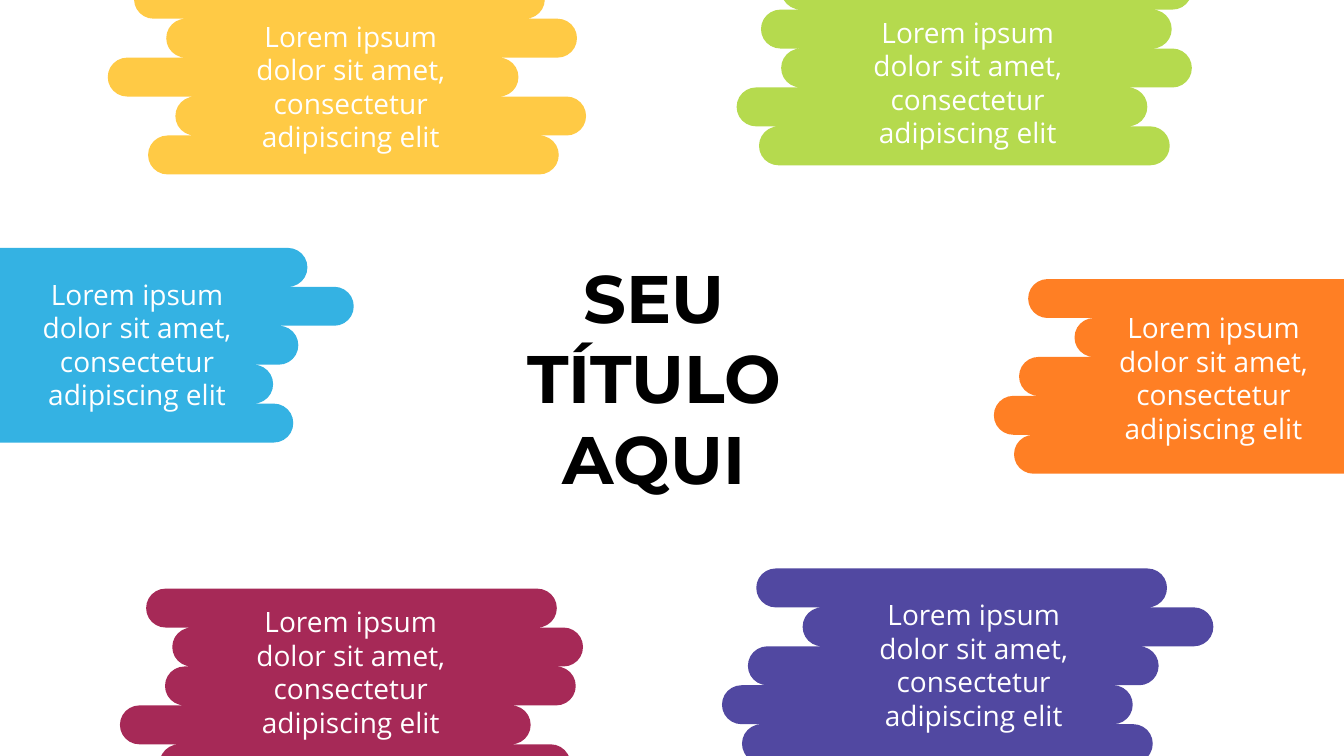
from math import asin, cos, degrees, pi, sin

from lxml.etree import Element
from pptx import Presentation
from pptx.dml.color import RGBColor
from pptx.enum.text import MSO_ANCHOR as Anchor, MSO_AUTO_SIZE as AutoSize, PP_ALIGN as Align
from pptx.oxml.ns import qn
from pptx.util import Pt

YELLOW = RGBColor(0xFF, 0xCA, 0x45)
GREEN = RGBColor(0xB5, 0xDA, 0x4E)
BLUE = RGBColor(0x34, 0xB2, 0xE3)
ORANGE = RGBColor(0xFF, 0x7F, 0x24)
MAROON = RGBColor(0xA6, 0x29, 0x57)
PURPLE = RGBColor(0x51, 0x48, 0xA1)
WHITE = RGBColor(0xFF, 0xFF, 0xFF)
BLACK = RGBColor(0x00, 0x00, 0x00)

# Content
TITLE = "SEU TÍTULO AQUI"
BODY = "Lorem ipsum dolor sit amet, consectetur adipiscing elit"

# Colour, top of the stack, left end of each bar, left and top of the text
SPLASHES = [
    (ORANGE, 199.4, (734.4, 767.5, 727.9, 709.9, 724.3), (786.2, 218.2)),
    (PURPLE, 406.1, (540.2, 573.3, 534.2, 515.7, 530), (614.9, 423.4)),
    (MAROON, 420.5, (104.4, 123.1, 117.9, 85.7, 114), (169.9, 428.4)),
    (BLUE, 177.1, (-73.8, -40.7, -80.3, -98.3, -83.9), (17.3, 194.4)),
    (YELLOW, -14.4, (95.8, 118.8, 77, 125.3, 105.8), (169.9, 10.1)),
    (GREEN, -20.9, (558, 543.6, 558, 526.2, 542.2), (610.6, 7.2)),
]

# Lengths in points
PAGE_WIDTH, PAGE_HEIGHT = 960, 540
BAR_WIDTH, BAR_HEIGHT = 293.4, 27.8
RADIUS = BAR_HEIGHT / 2
TITLE_BOX = (330.5, 179.3, 273.6, 181.4)
BODY_SIZE = (161.3, 104.4)

TITLE_FONT = {"name": "Montserrat", "size": Pt(48), "bold": True}
BODY_FONT = {"name": "Open Sans", "size": Pt(20), "bold": False}
FRAME_FORMAT = {
    "word_wrap": True,
    "auto_size": AutoSize.NONE,
    "vertical_anchor": Anchor.TOP,
    "margin_left": Pt(7.2),
    "margin_right": Pt(7.2),
    "margin_top": Pt(3.6),
    "margin_bottom": Pt(3.6),
}


def clamp(value, low, high):
    return max(low, min(high, value))


def cap(centre_x, centre_y, side):
    """Clockwise corners of a bar's end, each with the arc that leads to it."""
    first, last = (asin(clamp((edge - centre_y) / RADIUS, -1, 1)) for edge in (0, PAGE_HEIGHT))
    angles = [first, clamp(0, first, last), last]
    if side < 0:
        angles = [pi - angle for angle in reversed(angles)]
    on_page = 0 < centre_x < PAGE_WIDTH
    corners = []
    for before, angle in zip(angles[:1] + angles, angles):
        x = clamp(centre_x + RADIUS * cos(angle), 0, PAGE_WIDTH)
        y = centre_y + RADIUS * sin(angle)
        arc = (before, angle - before) if on_page and angle > before else None
        corners.append((Pt(x), Pt(y), arc))
    return corners


def bend(line, arc):
    """Turn a line of an outline into an arc."""
    start, sweep = (str(round(degrees(angle) * 60000)) for angle in arc)
    radius = str(Pt(RADIUS))
    curve = Element(qn("a:arcTo"), wR=radius, hR=radius, stAng=start, swAng=sweep)
    line.getparent().replace(line, curve)


def add_splash(page, colour, top, lefts):
    right_side, left_side = [], []
    for row, left in enumerate(lefts):
        centre_y = top + RADIUS + row * BAR_HEIGHT
        right_side += cap(left + BAR_WIDTH - RADIUS, centre_y, 1)
        left_side = cap(left + RADIUS, centre_y, -1) + left_side
    outline = right_side + left_side
    points = [(x, y) for x, y, arc in outline]
    builder = page.shapes.build_freeform(*points[0])
    builder.add_line_segments(points[1:], close=True)
    splash = builder.convert_to_shape()
    lines = list(splash._element.iter(qn("a:lnTo")))
    for line, (x, y, arc) in zip(lines, outline[1:]):
        if arc:
            bend(line, arc)
    splash.shadow.inherit = False
    splash.fill.solid()
    splash.fill.fore_color.rgb = colour
    splash.line.fill.background()


def write(box, text, font_format, colour):
    frame = box.text_frame
    for name, value in FRAME_FORMAT.items():
        setattr(frame, name, value)
    para = frame.paragraphs[0]
    para.alignment = Align.CENTER
    span = para.add_run()
    span.text = text
    for name, value in font_format.items():
        setattr(span.font, name, value)
    span.font.color.rgb = colour


deck = Presentation()
deck.slide_width, deck.slide_height = Pt(PAGE_WIDTH), Pt(PAGE_HEIGHT)
page = deck.slides.add_slide(deck.slide_layouts[5])

# Title
title = page.shapes.title
title.left, title.top, title.width, title.height = map(Pt, TITLE_BOX)
write(title, TITLE, TITLE_FONT, BLACK)

# Colour splashes with their texts
for colour, top, lefts, text_corner in SPLASHES:
    add_splash(page, colour, top, lefts)
    box = page.shapes.add_textbox(*map(Pt, text_corner + BODY_SIZE))
    write(box, BODY, BODY_FONT, WHITE)

deck.save("out.pptx")
